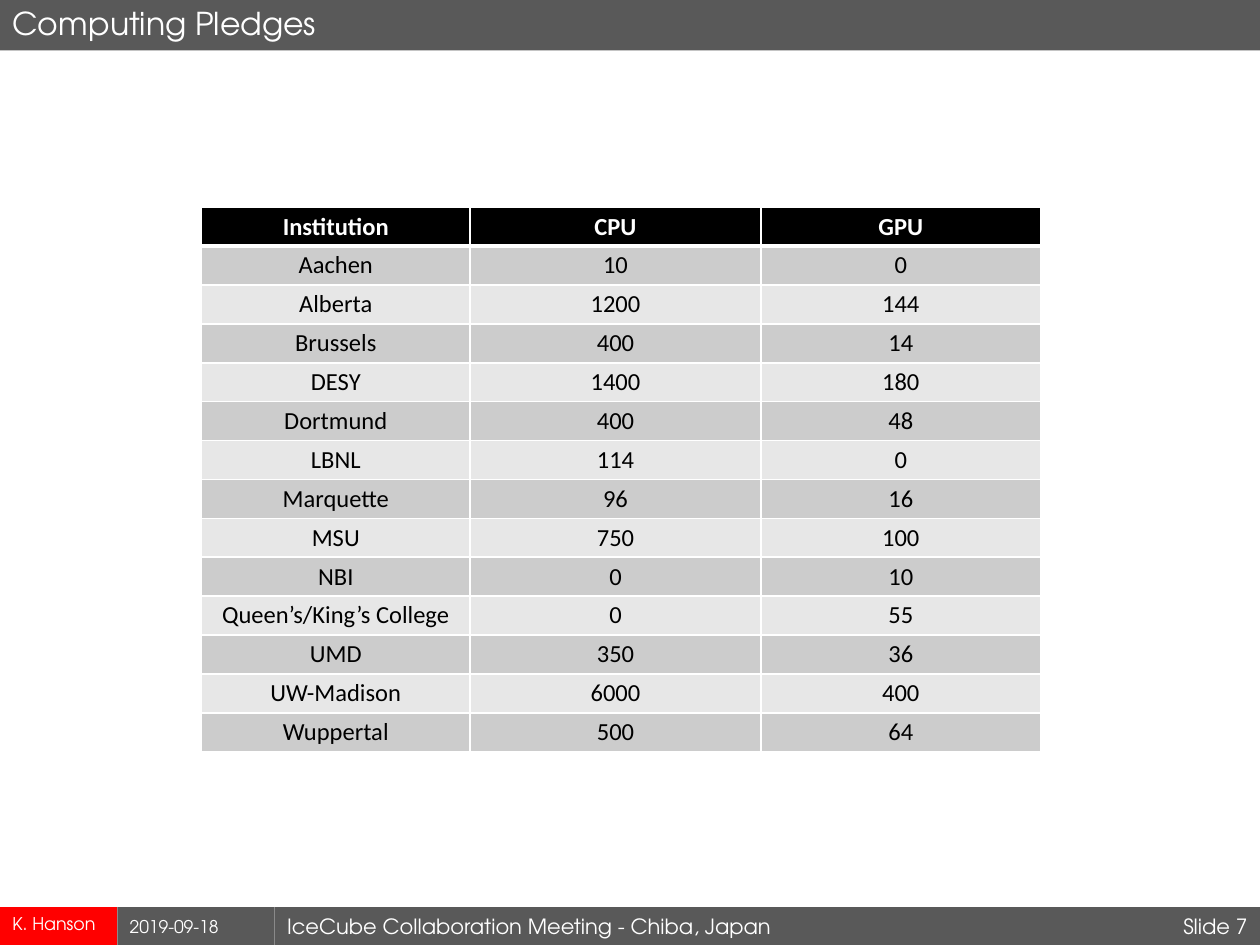
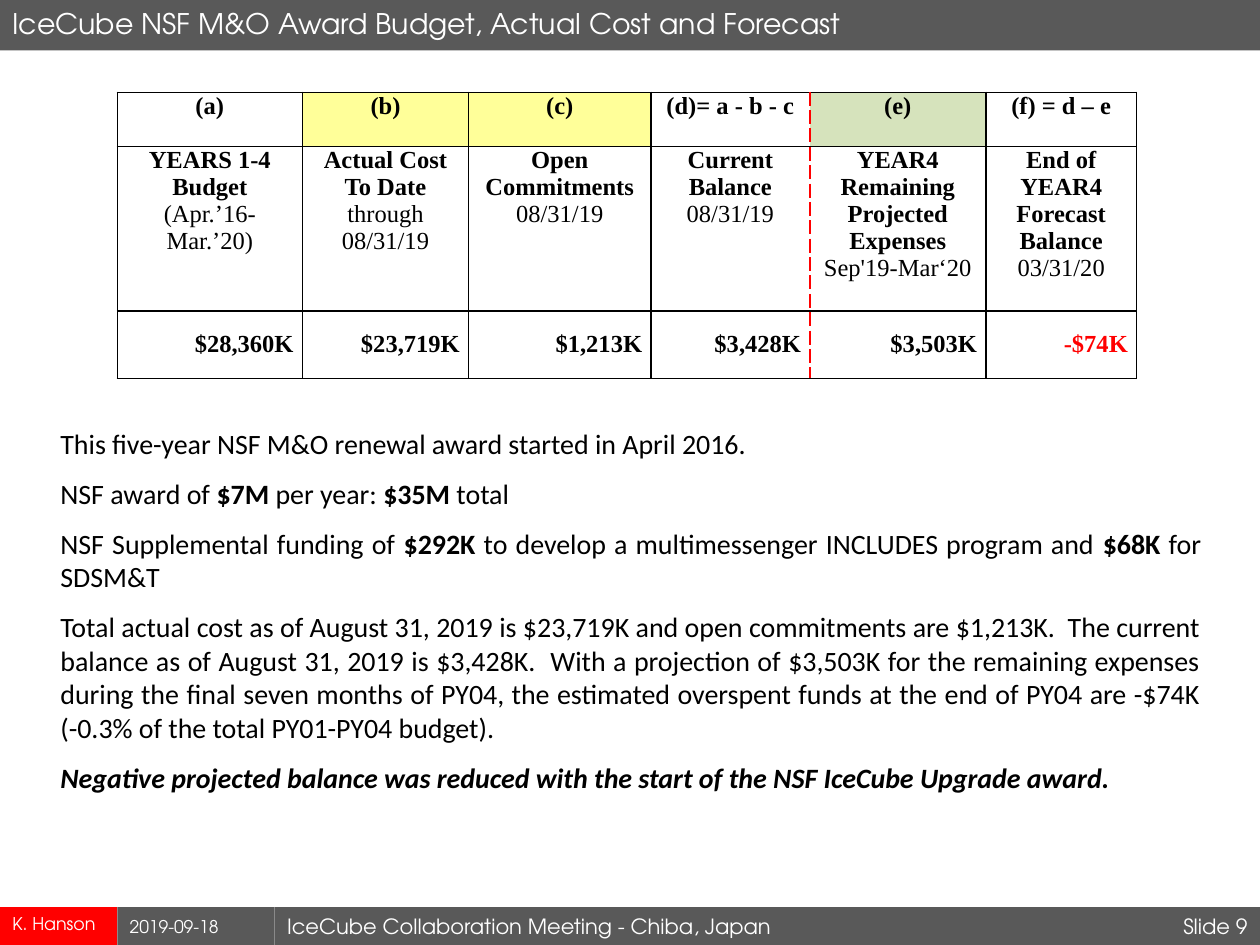
from copy import deepcopy
from dataclasses import dataclass
from typing import NamedTuple

from lxml.etree import SubElement
from pptx import Presentation
from pptx.dml.color import RGBColor
from pptx.enum.shapes import MSO_SHAPE
from pptx.enum.text import MSO_ANCHOR as Anchor, PP_ALIGN as Align
from pptx.oxml.ns import qn
from pptx.util import Pt

WHITE, BLACK, RED = "FFFFFF", "000000", "FF0000"
GRAY, DARK_BAND, LIGHT_BAND = "595959", "CCCCCC", "E7E7E7"
YELLOW, GREEN = "FFFF99", "D6E3BC"
HEADING_FONT, BODY_FONT, BUDGET_FONT = "TeX Gyre Adventor", "Calibri", "Times New Roman"
FOOTER_TOP, FOOTER_HEIGHT = 518.4, 21.6


class Run(NamedTuple):
    text: str
    bold: bool = False
    italic: bool = False


@dataclass
class Style:
    font: str
    size: float
    color: str
    align: Align = Align.LEFT


@dataclass
class Bar:
    text: str
    left: float
    top: float
    width: float
    height: float
    fill: str
    size: float
    align: Align = Align.LEFT
    anchor: Anchor = Anchor.MIDDLE
    line_spacing: float = 1.0


@dataclass
class Border:
    color: str
    width: float
    dash: str = "solid"


@dataclass
class Grid:
    left: float
    top: float
    columns: list[float]
    rows: list[float]


def rgb(color: str) -> RGBColor:
    return RGBColor.from_string(color)


def set_format(target, values: dict) -> None:
    for name, value in values.items():
        setattr(target, name, value)


def write_runs(paragraph, runs: list[Run], style: Style) -> None:
    paragraph.alignment = style.align
    for item in runs:
        run = paragraph.add_run()
        run.text = item.text.rstrip("\n")
        set_format(run.font, {"name": style.font, "size": Pt(style.size),
                              "bold": item.bold, "italic": item.italic})
        run.font.color.rgb = rgb(style.color)
        if item.text.endswith("\n"):
            paragraph.add_line_break()
            paragraph._p[-1].insert(0, deepcopy(run._r.rPr))


def draw_bar(slide, bar: Bar) -> None:
    shape = slide.shapes.add_shape(MSO_SHAPE.RECTANGLE, Pt(bar.left), Pt(bar.top),
                                   Pt(bar.width), Pt(bar.height))
    shape.shadow.inherit = False
    shape.fill.solid()
    shape.fill.fore_color.rgb = rgb(bar.fill)
    shape.line.fill.background()
    set_format(shape.text_frame, {"word_wrap": True, "vertical_anchor": bar.anchor})
    paragraph = shape.text_frame.paragraphs[0]
    paragraph.line_spacing = bar.line_spacing
    write_runs(paragraph, [Run(bar.text)], Style(HEADING_FONT, bar.size, WHITE, bar.align))


def add_framed_slide(presentation, title: str, title_size: float, number: int):
    slide = presentation.slides.add_slide(presentation.slide_layouts[6])
    draw_bar(slide, Bar(title, 0, 0, 720, 28.8, GRAY, title_size, line_spacing=0.9))
    left = 0.0
    for text, width, fill, size, align, anchor in (
        ("K. Hanson", 67, RED, 10, Align.LEFT, Anchor.TOP),
        ("2019-09-18", 90, GRAY, 10, Align.LEFT, Anchor.MIDDLE),
        ("IceCube Collaboration Meeting - Chiba, Japan", 463.6, GRAY, 12, Align.LEFT, Anchor.MIDDLE),
        (f"Slide {number}", 99.4, GRAY, 12, Align.RIGHT, Anchor.MIDDLE),
    ):
        draw_bar(slide, Bar(text, left, FOOTER_TOP, width, FOOTER_HEIGHT, fill, size, align, anchor))
        left += width
    return slide


def add_grid(slide, grid: Grid):
    frame = slide.shapes.add_table(len(grid.rows), len(grid.columns), Pt(grid.left), Pt(grid.top),
                                   Pt(sum(grid.columns)), Pt(sum(grid.rows)))
    table = frame.table
    set_format(table, {"first_row": False, "horz_banding": False})
    for column, width in zip(table.columns, grid.columns):
        column.width = Pt(width)
    for row, height in zip(table.rows, grid.rows):
        row.height = Pt(height)
    return table


def set_borders(cell, borders: dict[str, Border]) -> None:
    properties = cell._tc.get_or_add_tcPr()
    for position, side in enumerate(("L", "R", "T", "B")):
        border = borders[side]
        line = properties.makeelement(qn(f"a:ln{side}"), {"w": str(Pt(border.width))})
        fill = SubElement(line, qn("a:solidFill"))
        SubElement(fill, qn("a:srgbClr"), val=border.color)
        SubElement(line, qn("a:prstDash"), val=border.dash)
        properties.insert(position, line)


def fill_cell(cell, runs: list[Run], style: Style, fill: str | None, inset: float,
              anchor: Anchor, borders: dict[str, Border]) -> None:
    set_format(cell, {"margin_left": Pt(5), "margin_right": Pt(5), "margin_top": Pt(inset),
                      "margin_bottom": Pt(inset), "vertical_anchor": anchor})
    if fill:
        cell.fill.solid()
        cell.fill.fore_color.rgb = rgb(fill)
    else:
        cell.fill.background()
    write_runs(cell.text_frame.paragraphs[0], runs, style)
    set_borders(cell, borders)


PLEDGES = [
    ("Institution", "CPU", "GPU"),
    ("Aachen", 10, 0),
    ("Alberta", 1200, 144),
    ("Brussels", 400, 14),
    ("DESY", 1400, 180),
    ("Dortmund", 400, 48),
    ("LBNL", 114, 0),
    ("Marquette", 96, 16),
    ("MSU", 750, 100),
    ("NBI", 0, 10),
    ("Queen’s/King’s College", 0, 55),
    ("UMD", 350, 36),
    ("UW-Madison", 6000, 400),
    ("Wuppertal", 500, 64),
]

BUDGET_COLUMNS = [
    ("(a)", None, "YEARS 1-4 Budget\n", "(Apr.’16-Mar.’20)", "$28,360K"),
    ("(b)", YELLOW, "Actual Cost To Date", " through 08/31/19", "$23,719K"),
    ("(c)", YELLOW, "Open Commitments ", "08/31/19", "$1,213K"),
    ("(d)= a - b - c", None, "Current Balance ", "08/31/19", "$3,428K"),
    ("(e)", GREEN, "YEAR4 Remaining Projected Expenses\n", "Sep'19-Mar‘20", "$3,503K"),
    ("(f) = d – e", None, "End of YEAR4 Forecast Balance ", "03/31/20", "-$74K"),
]
FORECAST_COLUMN = 4

BUDGET_NOTES = [
    [Run("This five-year NSF M&O renewal award started in April 2016.")],
    [Run("NSF award of "), Run("$7M", True), Run(" per year: "), Run("$35M ", True), Run("total")],
    [Run("NSF Supplemental funding of "), Run("$292K", True),
     Run(" to develop a multimessenger INCLUDES program and "), Run("$68K", True), Run(" for SDSM&T")],
    [Run("Total actual cost as of August 31, 2019 is $23,719K and open commitments are $1,213K.  "
         "The current balance as of August 31, 2019 is $3,428K.  With a projection of $3,503K for "
         "the remaining expenses during the final seven months of PY04, the estimated overspent "
         "funds at the end of PY04 are -$74K (-0.3% of the total PY01-PY04 budget).")],
    [Run("Negative projected balance was reduced with the start of the NSF IceCube Upgrade award.",
         True, True)],
]


def draw_pledges(slide) -> None:
    table = add_grid(slide, Grid(115.2, 118.4, [153.4, 166.3, 159.8], [22.2] * len(PLEDGES)))
    thin, thick = Border(WHITE, 1), Border(WHITE, 3)
    for row, pledge in enumerate(PLEDGES):
        header = row == 0
        fill = BLACK if header else DARK_BAND if row % 2 else LIGHT_BAND
        style = Style(BODY_FONT, 14, WHITE if header else BLACK, Align.CENTER)
        borders = {"L": thin, "R": thin, "T": thick if row == 1 else thin,
                   "B": thick if header else thin}
        for column, value in enumerate(pledge):
            fill_cell(table.cell(row, column), [Run(str(value), header)], style, fill, 2.6,
                      Anchor.TOP, borders)


def draw_budget(slide) -> None:
    table = add_grid(slide, Grid(67, 52.8, [105.8, 95, 104.2, 90.8, 100.6, 86.2], [30.8, 94.2, 38.4]))
    solid, dashed = Border(BLACK, 1), Border(RED, 1.5, "dash")
    centered = Style(BUDGET_FONT, 14, BLACK, Align.CENTER)
    for column, (letter, fill, heading, period, amount) in enumerate(BUDGET_COLUMNS):
        borders = {"L": dashed if column == FORECAST_COLUMN else solid,
                   "R": dashed if column == FORECAST_COLUMN - 1 else solid,
                   "T": solid, "B": solid}
        amount_style = Style(BUDGET_FONT, 14, RED if amount.startswith("-") else BLACK, Align.RIGHT)
        for row, (runs, style, cell_fill, anchor) in enumerate((
            ([Run(letter, True)], centered, fill, Anchor.TOP),
            ([Run(heading, True), Run(period)], centered, None, Anchor.TOP),
            ([Run(amount, True)], amount_style, None, Anchor.MIDDLE),
        )):
            fill_cell(table.cell(row, column), runs, style, cell_fill, 0, anchor, borders)


def draw_notes(slide) -> None:
    frame = slide.shapes.add_textbox(Pt(27.4), Pt(240.5), Pt(666), Pt(216)).text_frame
    frame.word_wrap = True
    style = Style(BODY_FONT, 16, BLACK, Align.JUSTIFY)
    for index, runs in enumerate(BUDGET_NOTES):
        paragraph = frame.add_paragraph() if index else frame.paragraphs[0]
        set_format(paragraph, {"space_before": Pt(3.2), "space_after": Pt(6)})
        write_runs(paragraph, runs, style)


def main() -> None:
    presentation = Presentation()
    set_format(presentation, {"slide_width": Pt(720), "slide_height": Pt(540)})
    draw_pledges(add_framed_slide(presentation, "Computing Pledges", 18, 7))
    budget_slide = add_framed_slide(
        presentation, "IceCube NSF M&O Award Budget, Actual Cost and Forecast", 16.2, 9)
    draw_budget(budget_slide)
    draw_notes(budget_slide)
    presentation.save("out.pptx")


if __name__ == "__main__":
    main()
